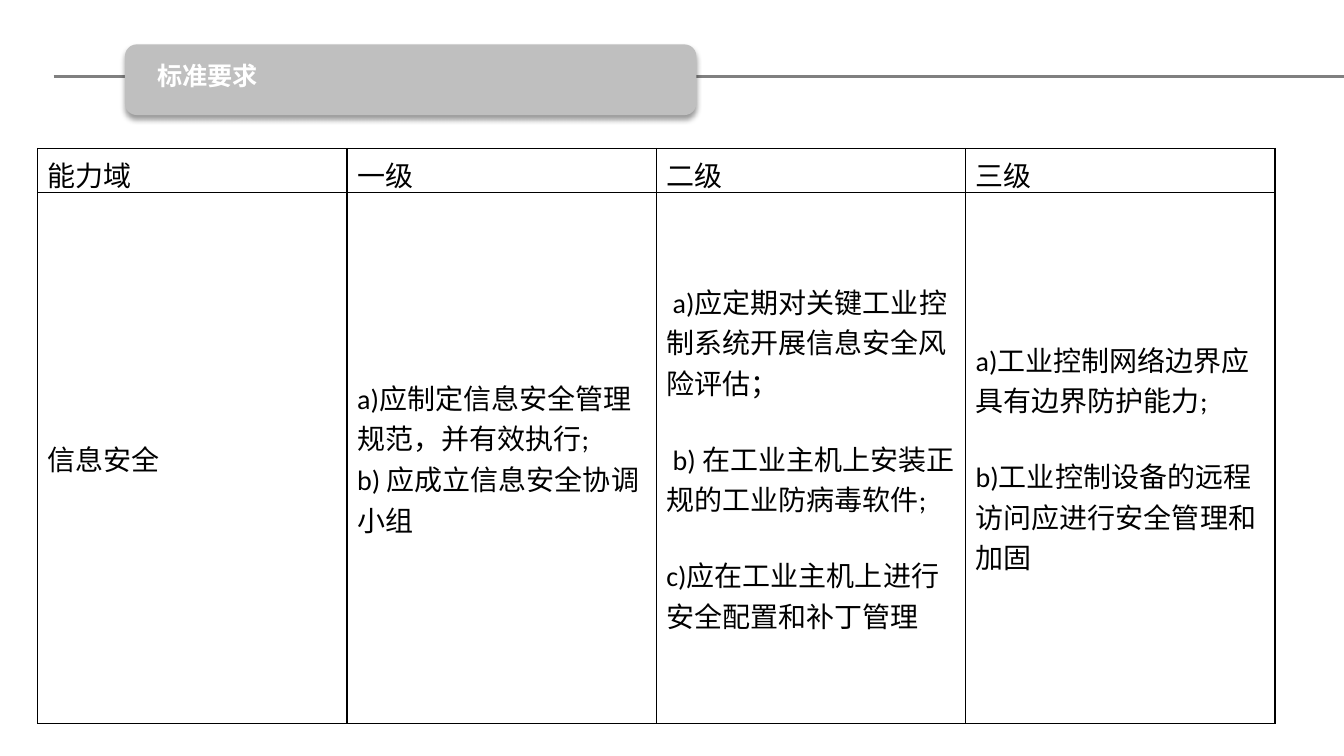
import pptx
import pptx.util
import pptx.dml.color
import pptx.enum.shapes
import pptx.enum.text
import pptx.oxml
import pptx.oxml.ns
from lxml import etree

Cm, Pt = pptx.util.Cm, pptx.util.Pt
qn = pptx.oxml.ns.qn
COLORS = {"rule": "808080", "banner": "BFBFBF", "title": "FFFFFF",
          "text": "000000", "border": "000000", "shadow": "000000"}
TITLE_FONT, BODY_FONT, CJK_FONT = "Noto Sans CJK SC", "Calibri", "Noto Sans CJK SC"

# Each cell is a list of paragraphs, with the gap in points between them
HEADINGS = ["能力域", "一级", "二级", "三级"]
REQUIREMENTS = [
    (["信息安全"], 0),
    (["a)应制定信息安全管理规范，并有效执行;", "b) 应成立信息安全协调 小组"], 0),
    ([" a)应定期对关键工业控制系统开展信息安全风险评估；",
      " b) 在工业主机上安装正规的工业防病毒软件;",
      "c)应在工业主机上进行安全配置和补丁管理"], 25),
    (["a)工业控制网络边界应具有边界防护能力;",
      "b)工业控制设备的远程访问应进行安全管理和加固"], 25),
]


def rgb(name):
    return pptx.dml.color.RGBColor.from_string(COLORS[name])


def style_runs(paragraph, size, font, color, bold=False):
    for run in paragraph.runs:
        run.font.size, run.font.name, run.font.bold = Pt(size), font, bold
        run.font.color.rgb = rgb(color)
        east_asian = etree.SubElement(run.font._element, qn("a:ea"))
        east_asian.set("typeface", CJK_FONT)


def add_soft_shadow(shape):
    shape.shadow.inherit = False
    effects = shape._element.spPr.find(qn("a:effectLst"))
    effects.append(pptx.oxml.parse_xml(
        f'<a:outerShdw {pptx.oxml.ns.nsdecls("a")} blurRad="{Pt(4)}" dist="{Pt(3)}" '
        f'dir="5400000" rotWithShape="0"><a:srgbClr val="{COLORS["shadow"]}">'
        '<a:alpha val="40000"/></a:srgbClr></a:outerShdw>'))


def add_header(slide, left, top, width, height):
    # Rule running to the right edge
    middle = top + Cm(0.81)
    rule = slide.shapes.add_connector(
        pptx.enum.shapes.MSO_CONNECTOR.STRAIGHT, left, middle, left + width, middle)
    rule.line.color.rgb = rgb("rule")
    rule.line.width = Pt(2)
    etree.SubElement(rule._element.spPr, qn("a:effectLst"))

    # Banner
    banner = slide.shapes.add_shape(
        pptx.enum.shapes.MSO_SHAPE.ROUNDED_RECTANGLE,
        left + Cm(1.8), top, Cm(14.4), height)
    banner.fill.solid()
    banner.fill.fore_color.rgb = rgb("banner")
    banner.line.fill.background()
    add_soft_shadow(banner)

    # Title
    title = slide.shapes.add_textbox(
        left + Cm(2.28), top + Cm(0.23), Cm(13.92), Cm(1.12)).text_frame
    title.word_wrap = True
    title.margin_left = title.margin_right = Cm(0.33)
    title.margin_top = title.margin_bottom = Cm(0.17)
    title.text = "标准要求"
    style_runs(title.paragraphs[0], 18, TITLE_FONT, "title", bold=True)


def add_borders(cell):
    properties = cell._tc.get_or_add_tcPr()
    for position, side in enumerate(("lnL", "lnR", "lnT", "lnB")):
        properties.insert(position, pptx.oxml.parse_xml(
            f'<a:{side} {pptx.oxml.ns.nsdecls("a")} w="{Pt(1)}"><a:solidFill>'
            f'<a:srgbClr val="{COLORS["border"]}"/></a:solidFill></a:{side}>'))


def fill_cell(cell, paragraphs, gap):
    cell.fill.background()
    add_borders(cell)
    cell.vertical_anchor = pptx.enum.text.MSO_ANCHOR.MIDDLE
    cell.text_frame.text = "\n".join(paragraphs)
    for index, paragraph in enumerate(cell.text_frame.paragraphs):
        if index and gap:
            paragraph.space_before = Pt(gap)
        style_runs(paragraph, 20, BODY_FONT, "text")


def add_requirements(slide, left, top, width, height):
    rows = [[([heading], 0) for heading in HEADINGS], REQUIREMENTS]
    table = slide.shapes.add_table(
        len(rows), len(HEADINGS), left, top, width, height).table
    table.first_row = table.horz_banding = False
    for column in table.columns:
        column.width = int(width / len(HEADINGS))
    heading_height = Cm(1.09)
    table.rows[0].height = heading_height
    table.rows[1].height = height - heading_height
    for row, contents in zip(table.rows, rows):
        for cell, (paragraphs, gap) in zip(row.cells, contents):
            fill_cell(cell, paragraphs, gap)


def main():
    deck = pptx.Presentation()
    deck.slide_width, deck.slide_height = Cm(33.87), Cm(19.05)
    slide = deck.slides.add_slide(deck.slide_layouts[6])
    header_left = Cm(1.35)
    add_header(slide, header_left, Cm(1.12), deck.slide_width - header_left, Cm(1.78))
    add_requirements(slide, Cm(0.95), Cm(3.74), Cm(31.18), Cm(14.48))
    deck.save("out.pptx")


if __name__ == "__main__":
    main()
